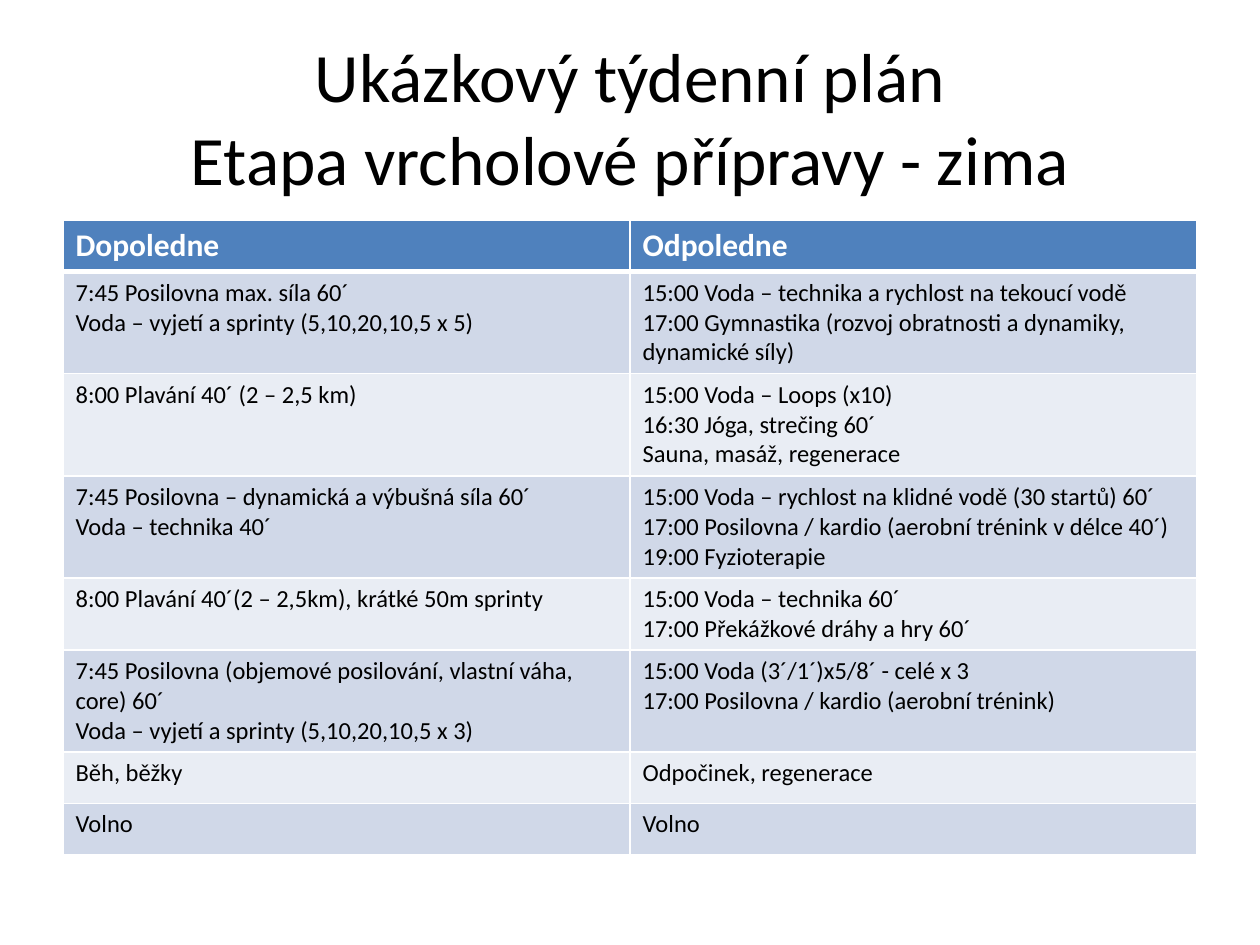
from lxml.etree import SubElement
from pptx import Presentation
from pptx.dml.color import RGBColor
from pptx.enum.text import MSO_ANCHOR, MSO_AUTO_SIZE, PP_ALIGN
from pptx.oxml.ns import qn
from pptx.util import Pt

TITLE = ["Ukázkový týdenní plán", "Etapa vrcholové přípravy - zima"]
HEADINGS = [["Dopoledne"], ["Odpoledne"]]
WEEK = [
    (["7:45 Posilovna max. síla 60´",
      "Voda – vyjetí a sprinty (5,10,20,10,5 x 5)"],
     ["15:00 Voda – technika a rychlost na tekoucí vodě",
      "17:00 Gymnastika (rozvoj obratnosti a dynamiky, dynamické síly)"]),
    (["8:00 Plavání 40´ (2 – 2,5 km)"],
     ["15:00 Voda – Loops (x10)",
      "16:30 Jóga, strečing 60´",
      "Sauna, masáž, regenerace"]),
    (["7:45 Posilovna – dynamická a výbušná síla 60´",
      "Voda – technika 40´"],
     ["15:00 Voda – rychlost na klidné vodě (30 startů) 60´",
      "17:00 Posilovna / kardio (aerobní trénink v délce 40´)",
      "19:00 Fyzioterapie"]),
    (["8:00 Plavání 40´(2 – 2,5km), krátké 50m sprinty"],
     ["15:00 Voda – technika 60´",
      "17:00 Překážkové dráhy a hry 60´"]),
    (["7:45 Posilovna (objemové posilování, vlastní váha, core) 60´",
      "Voda – vyjetí a sprinty (5,10,20,10,5 x 3)"],
     ["15:00 Voda (3´/1´)x5/8´ - celé x 3",
      "17:00 Posilovna / kardio (aerobní trénink)"]),
    (["Běh, běžky"], ["Odpočinek, regenerace"]),
    (["Volno"], ["Volno"]),
]


def color(hex_value):
    return RGBColor.from_string(hex_value)


def apply(target, values):
    for name, value in values.items():
        setattr(target, name, value)


class PlanSlide:
    title_font = {"name": "Calibri", "size": Pt(39.6), "bold": False}
    heading_font = {"name": "Calibri", "size": Pt(18), "bold": True}
    body_font = {"name": "Calibri", "size": Pt(14), "bold": False}
    heading_fill = "4F81BD"
    band_fills = ["D0D8E8", "E9EDF4"]
    line = "FFFFFF"

    def __init__(self, deck):
        self.slide = deck.slides.add_slide(deck.slide_layouts[5])

    def add_text(self, paragraph, text, font, ink):
        run = paragraph.add_run()
        run.text = text
        apply(run.font, font)
        run.font.color.rgb = color(ink)

    def title(self, lines, left, top, width, height):
        heading = self.slide.shapes.title
        apply(heading, {"left": Pt(left), "top": Pt(top),
                        "width": Pt(width), "height": Pt(height)})
        frame = heading.text_frame
        apply(frame, {"auto_size": MSO_AUTO_SIZE.NONE, "word_wrap": True,
                      "vertical_anchor": MSO_ANCHOR.MIDDLE})
        paragraph = frame.paragraphs[0]
        paragraph.alignment = PP_ALIGN.CENTER
        for index, line in enumerate(lines):
            if index:
                paragraph.add_line_break()
            self.add_text(paragraph, line, self.title_font, "000000")

    def borders(self, cell, widths):
        properties = cell._tc.get_or_add_tcPr()
        for position, (side, width) in enumerate(widths.items()):
            edge = SubElement(properties, qn(f"a:{side}"), w=str(Pt(width)))
            fill = SubElement(edge, qn("a:solidFill"))
            SubElement(fill, qn("a:srgbClr"), val=self.line)
            properties.insert(position, edge)

    def cell(self, cell, lines, font, ink, fill, top=1, bottom=1):
        cell.fill.solid()
        cell.fill.fore_color.rgb = color(fill)
        self.borders(cell, {"lnL": 1, "lnR": 1, "lnT": top, "lnB": bottom})
        frame = cell.text_frame
        for index, line in enumerate(lines):
            paragraph = frame.add_paragraph() if index else frame.paragraphs[0]
            self.add_text(paragraph, line, font, ink)

    def table(self, headings, days, left, top, width, height, row_height):
        plan = self.slide.shapes.add_table(
            len(days) + 1, len(headings),
            Pt(left), Pt(top), Pt(width), Pt(height)).table
        for row in plan.rows:
            row.height = Pt(row_height)
        for column, lines in enumerate(headings):
            self.cell(plan.cell(0, column), lines, self.heading_font,
                      "FFFFFF", self.heading_fill, bottom=3)
        for day, sessions in enumerate(days):
            for column, lines in enumerate(sessions):
                self.cell(plan.cell(day + 1, column), lines, self.body_font,
                          "000000", self.band_fills[day % 2],
                          top=1 if day else 3)


def main():
    deck = Presentation()
    apply(deck, {"slide_width": Pt(720), "slide_height": Pt(540)})
    plan = PlanSlide(deck)
    plan.title(TITLE, 36, 21.6, 648, 90)
    plan.table(HEADINGS, WEEK, 36, 126, 648, 358.6, 29.2)
    deck.save("out.pptx")


if __name__ == "__main__":
    main()
